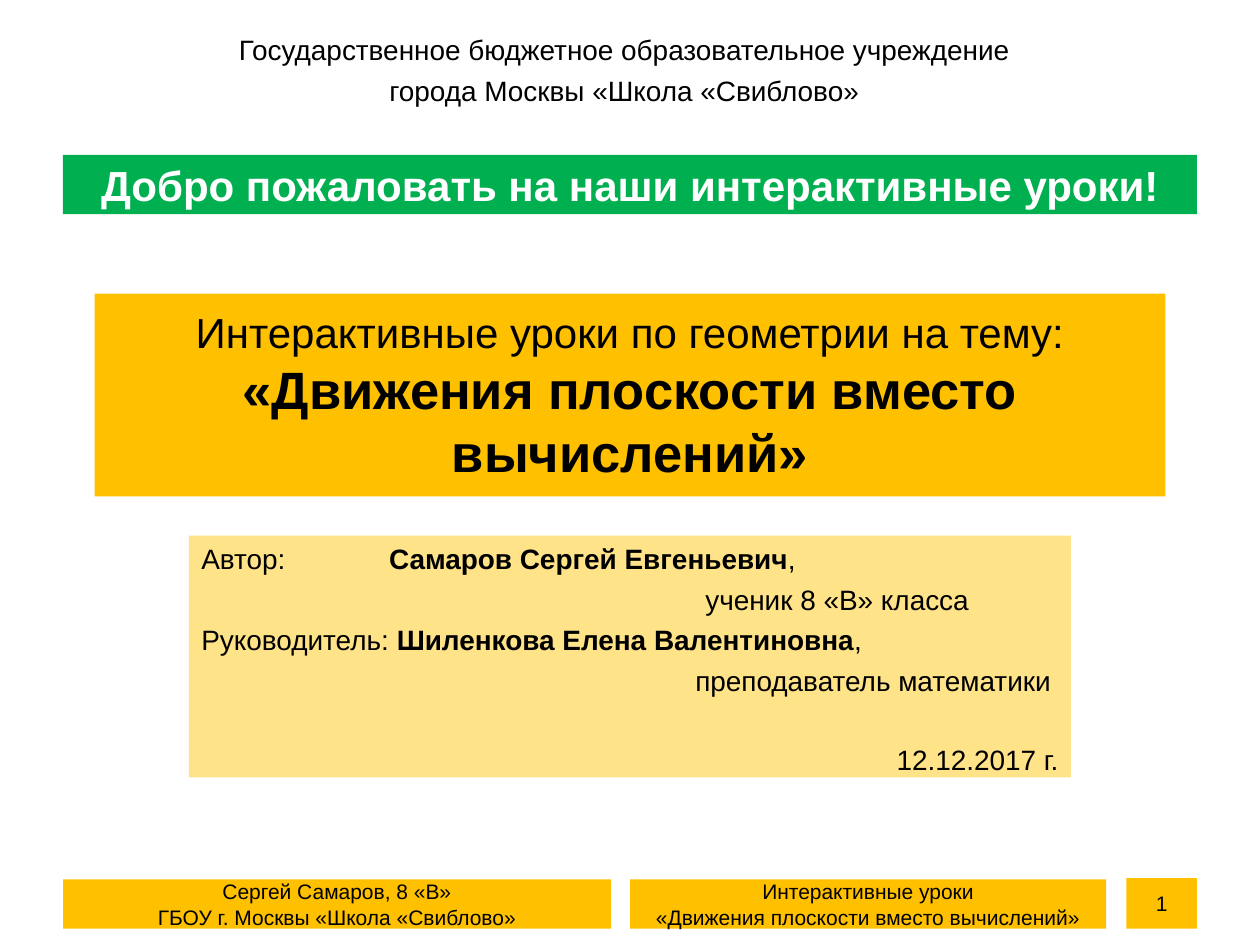
from lxml import etree
from pptx import Presentation
from pptx.dml.color import RGBColor
from pptx.enum.shapes import MSO_SHAPE
from pptx.enum.text import MSO_ANCHOR, MSO_AUTO_SIZE, PP_ALIGN
from pptx.oxml.ns import qn
from pptx.util import Inches, Pt

RECT = MSO_SHAPE.RECTANGLE
TOP, MID = MSO_ANCHOR.TOP, MSO_ANCHOR.MIDDLE
LEFT, MID_X, RIGHT = PP_ALIGN.LEFT, PP_ALIGN.CENTER, PP_ALIGN.RIGHT
FIXED = MSO_AUTO_SIZE.NONE

COLORS = {"gold": "FFC000", "cream": "FFE389", "green": "00B050",
          "black": "000000", "white": "FFFFFF"}

# A run is (text, size, bold); a line is (runs, align, space before, tab stop).
SCHOOL = [
    ([("Государственное бюджетное образовательное учреждение", 16, False)], MID_X, 0, None),
    ([("города Москвы «Школа «Свиблово»", 16, False)], MID_X, 4, None),
]
TOPIC = [([("Интерактивные уроки по геометрии на тему:\v", 24, False),
           ("«Движения плоскости вместо вычислений»", 30, True)], MID_X, 0, None)]
PEOPLE = [
    ([("Автор:\t", 16, False), ("Самаров Сергей Евгеньевич", 16, True),
      (",", 16, False)], LEFT, 0, 1.49),
    ([("\tученик 8 «В» класса", 16, False)], LEFT, 4, 4),
    ([("Руководитель: ", 16, False), ("Шиленкова Елена Валентиновна", 16, True),
      (",", 16, False)], LEFT, 4, None),
    ([("\tпреподаватель математики", 16, False)], LEFT, 4, 3.92),
    ([("12.12.2017 г.", 16, False)], RIGHT, 26, None),
]
HELLO = [([("Добро пожаловать на наши интерактивные уроки!", 24, True)], MID_X, 0, None)]
FOOTERS = [
    ((0.5, 6.98, 4.35, 0.39), ["Сергей Самаров, 8 «В»", "ГБОУ г. Москвы «Школа «Свиблово»"]),
    ((5, 6.98, 3.78, 0.39), ["Интерактивные уроки", "«Движения плоскости вместо вычислений»"]),
    ((8.94, 6.97, 0.56, 0.4), ["1"]),
]


def write(shape, lines, color="black", anchor=MID):
    frame = shape.text_frame
    form = {"word_wrap": True, "auto_size": FIXED, "vertical_anchor": anchor}
    for key, value in form.items():
        setattr(frame, key, value)
    for i, (runs, align, gap, tab) in enumerate(lines):
        para = frame.add_paragraph() if i else frame.paragraphs[0]
        if tab:
            stops = etree.SubElement(para._p.get_or_add_pPr(), qn("a:tabLst"))
            etree.SubElement(stops, qn("a:tab"), pos=str(Inches(tab)), algn="l")
        para.alignment = align
        para.space_before = Pt(gap)
        for text, size, bold in runs:
            run = para.add_run()
            run.text = text.rstrip("\v")
            style = {"name": "Arial", "size": Pt(size), "bold": bold}
            for key, value in style.items():
                setattr(run.font, key, value)
            run.font.color.rgb = RGBColor.from_string(COLORS[color])
            if text.endswith("\v"):
                para.add_line_break()


def paint(shape, fill):
    shape.fill.solid()
    shape.fill.fore_color.rgb = RGBColor.from_string(COLORS[fill])
    shape.line.fill.background()


def add_panel(slide, box, fill, lines, color="black", anchor=MID):
    panel = slide.shapes.add_shape(RECT, *map(Inches, box))
    panel.shadow.inherit = False
    paint(panel, fill)
    write(panel, lines, color, anchor)


def main():
    deck = Presentation()
    deck.slide_width, deck.slide_height = Inches(10), Inches(7.5)
    slide = deck.slides.add_slide(deck.slide_layouts[5])

    title = slide.shapes.title
    place = {"left": 0.75, "top": 2.33, "width": 8.5, "height": 1.61}
    for key, value in place.items():
        setattr(title, key, Inches(value))
    paint(title, "gold")
    write(title, TOPIC)

    add_panel(slide, (1.5, 4.25, 7, 1.92), "cream", PEOPLE, anchor=TOP)
    add_panel(slide, (0.5, 1.23, 9, 0.47), "green", HELLO, "white")
    for box, texts in FOOTERS:
        lines = [([(text, 12, False)], MID_X, 0, None) for text in texts]
        add_panel(slide, box, "gold", lines)

    school = slide.shapes.add_textbox(*map(Inches, (0.98, 0.21, 7.95, 0.71)))
    write(school, SCHOOL, anchor=TOP)
    deck.save("out.pptx")


if __name__ == "__main__":
    main()
